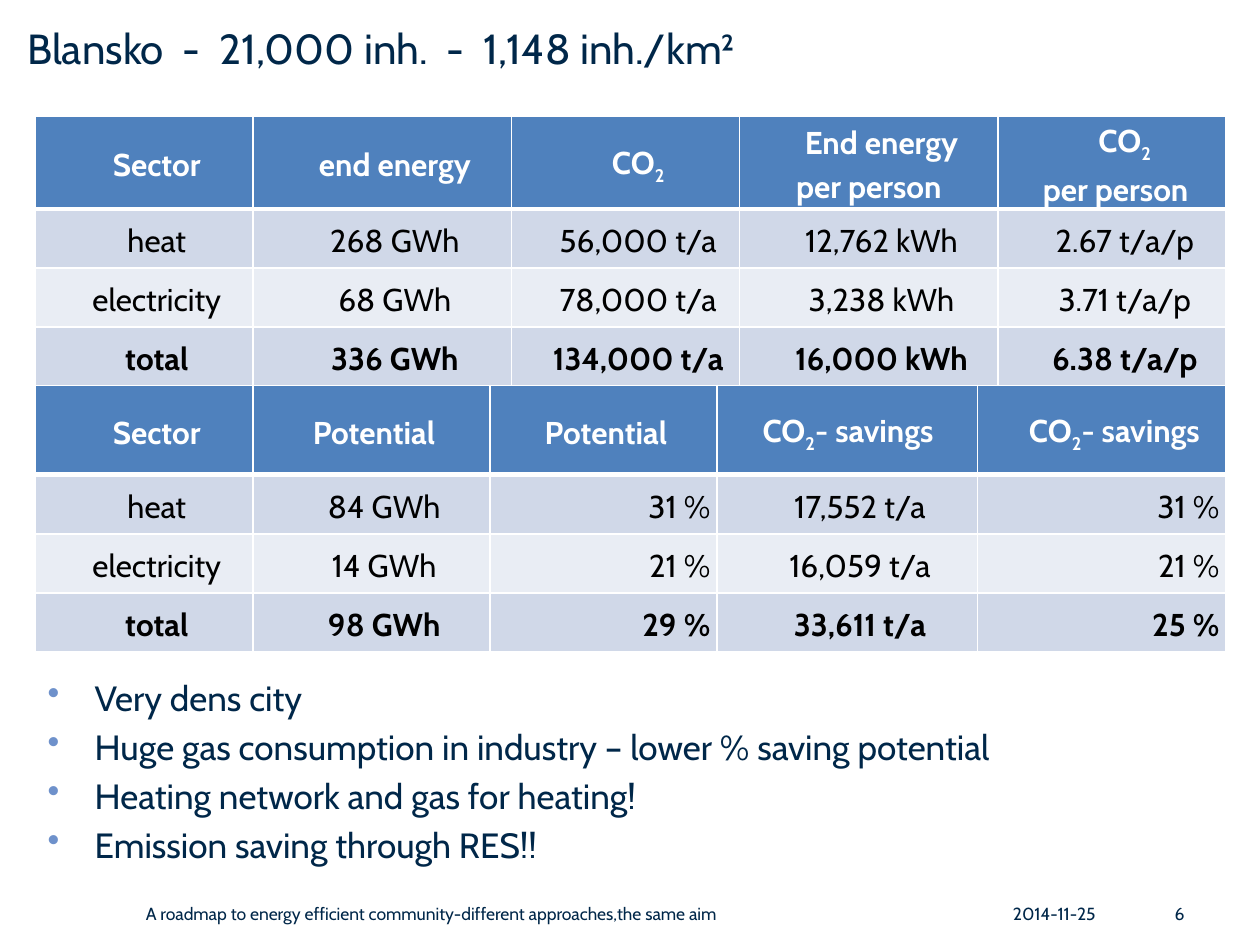
from pptx import Presentation
from pptx.dml.color import RGBColor
from pptx.enum.text import MSO_ANCHOR, PP_ALIGN
from pptx.oxml import parse_xml
from pptx.oxml.ns import nsdecls
from pptx.util import Cm, Pt

FONT = "Cabin"
NAVY, WHITE, BLACK, BULLET = "002749", "FFFFFF", "000000", "6E91CB"
HEAD, BANDS = "4F81BD", ("D0D8E8", "E9EDF4")
LEFT, CENTER, RIGHT = PP_ALIGN.LEFT, PP_ALIGN.CENTER, PP_ALIGN.RIGHT

TITLE = "Blansko  -  21,000 inh.  -  1,148 inh./km²"
BULLETS = [
    "Very dens city",
    "Huge gas consumption in industry – lower % saving potential",
    "Heating network and gas for heating!",
    "Emission saving through RES!!",
]
FOOTERS = [
    ("2014-11-25", 20.17, 2.34, LEFT),
    ("A roadmap to energy efficient community-different approaches,the same aim", 2.69, 16.41, LEFT),
    ("6", 22.5, 1.63, RIGHT),
]

# "_" switches subscript on and off
TABLES = [
    {
        "top": 2.34,
        "head_height": 1.86,
        "widths": [4.39, 5.21, 4.6, 5.21, 4.6],
        "head_indents": [0.51] * 5,
        "aligns": [CENTER] * 5,
        "rows": [
            ["Sector", "end energy", "CO_2_", "End energy\nper person", "CO_2_\n per person"],
            ["heat", "268 GWh", "56,000 t/a", "12,762 kWh", "2.67 t/a/p"],
            ["electricity", "68 GWh", "78,000 t/a", "3,238 kWh", "3.71 t/a/p"],
            ["total", "336 GWh", "134,000 t/a", "16,000 kWh", "6.38 t/a/p"],
        ],
    },
    {
        "top": 7.77,
        "head_height": 1.8,
        "widths": [4.39, 4.78, 4.57, 5.26, 5],
        "head_indents": [0.51, 0.1, 0.1, 0.03, 0.51],
        "aligns": [CENTER, CENTER, RIGHT, CENTER, RIGHT],
        "rows": [
            ["Sector", "Potential", "Potential", "CO_2_- savings", "CO_2_- savings"],
            ["heat", "84 GWh", "31 %", "17,552 t/a", "31 %"],
            ["electricity", "14 GWh", "21 %", "16,059 t/a", "21 %"],
            ["total", "98 GWh", "29 %", "33,611 t/a", "25 %"],
        ],
    },
]
TABLE_LEFT, ROW_HEIGHT, INDENT = 0.71, 1.19, 0.51


def rgb(value):
    return RGBColor.from_string(value)


def add_run(p, text, size, color, bold=False, sub=False):
    r = p.add_run()
    r.text = text
    r.font.name, r.font.size, r.font.bold = FONT, Pt(size), bold
    r.font.color.rgb = rgb(color)
    if sub:
        r._r.get_or_add_rPr().set("baseline", "-25000")


def add_rich(p, text, size, color, bold):
    for i, part in enumerate(text.split("_")):
        for j, line in enumerate(part.split("\n")):
            if j:
                p.add_line_break()
            if line:
                add_run(p, line, size, color, bold, i % 2 == 1)


def set_indent(p, margin, first):
    pPr = p._p.get_or_add_pPr()
    pPr.set("marL", str(Cm(margin)))
    pPr.set("indent", str(Cm(first)))
    return pPr


def add_text(s, lines, box, size, align=LEFT, anchor=MSO_ANCHOR.TOP, bullets=False):
    tf = s.shapes.add_textbox(*map(Cm, box)).text_frame
    tf.word_wrap = True
    tf.vertical_anchor = anchor
    for i, line in enumerate(lines):
        p = tf.paragraphs[0] if i == 0 else tf.add_paragraph()
        p.alignment = align
        if i:
            p.space_before = Pt(size * 0.2)
        if bullets:
            pPr = set_indent(p, 0.95, -0.95)
            pPr.append(parse_xml(f'<a:buClr {nsdecls("a")}><a:srgbClr val="{BULLET}"/></a:buClr>'))
            pPr.append(parse_xml(f'<a:buChar {nsdecls("a")} char="•"/>'))
        add_run(p, line, size, NAVY)


def add_borders(cell, row):
    tcPr = cell._tc.get_or_add_tcPr()
    widths = {"L": 1, "R": 1, "T": 3 if row == 1 else 1, "B": 3 if row == 0 else 1}
    for side, width in widths.items():
        tcPr.append(parse_xml(
            f'<a:ln{side} {nsdecls("a")} w="{Pt(width)}"><a:solidFill>'
            f'<a:srgbClr val="{WHITE}"/></a:solidFill></a:ln{side}>'))


def fill_cell(cell, text, row, indent, align, last):
    head = row == 0
    add_borders(cell, row)
    cell.fill.solid()
    cell.fill.fore_color.rgb = rgb(HEAD if head else BANDS[(row - 1) % 2])
    cell.margin_left = cell.margin_right = Cm(0.13)
    cell.margin_top = cell.margin_bottom = 0
    cell.vertical_anchor = MSO_ANCHOR.MIDDLE
    p = cell.text_frame.paragraphs[0]
    p.alignment, p.line_spacing = align, 1.15
    set_indent(p, 0, indent)
    add_rich(p, text, 18, WHITE if head else BLACK, head or last)


def add_data_table(s, data):
    rows, widths = data["rows"], data["widths"]
    heights = [data["head_height"]] + [ROW_HEIGHT] * (len(rows) - 1)
    table = s.shapes.add_table(
        len(rows), len(widths), Cm(TABLE_LEFT), Cm(data["top"]),
        Cm(sum(widths)), Cm(sum(heights))).table
    for column, width in zip(table.columns, widths):
        column.width = Cm(width)
    for i, (texts, height) in enumerate(zip(rows, heights)):
        table.rows[i].height = Cm(height)
        for j, text in enumerate(texts):
            indent = data["head_indents"][j] if i == 0 else INDENT
            align = CENTER if i == 0 else data["aligns"][j]
            fill_cell(table.cell(i, j), text, i, indent, align, i == len(rows) - 1)


def main():
    prs = Presentation()
    prs.slide_width, prs.slide_height = Cm(25.4), Cm(19.05)
    s = prs.slides.add_slide(prs.slide_layouts[6])
    add_text(s, BULLETS, (0.71, 13.51, 24, 2.79), 20, bullets=True)
    for text, left, width, align in FOOTERS:
        add_text(s, [text], (left, 17.91, width, 1.02), 10, align, MSO_ANCHOR.MIDDLE)
    add_text(s, [TITLE], (0.3, 0.33, 22.2, 1.6), 24)
    for data in TABLES:
        add_data_table(s, data)
    prs.save("out.pptx")


if __name__ == "__main__":
    main()
